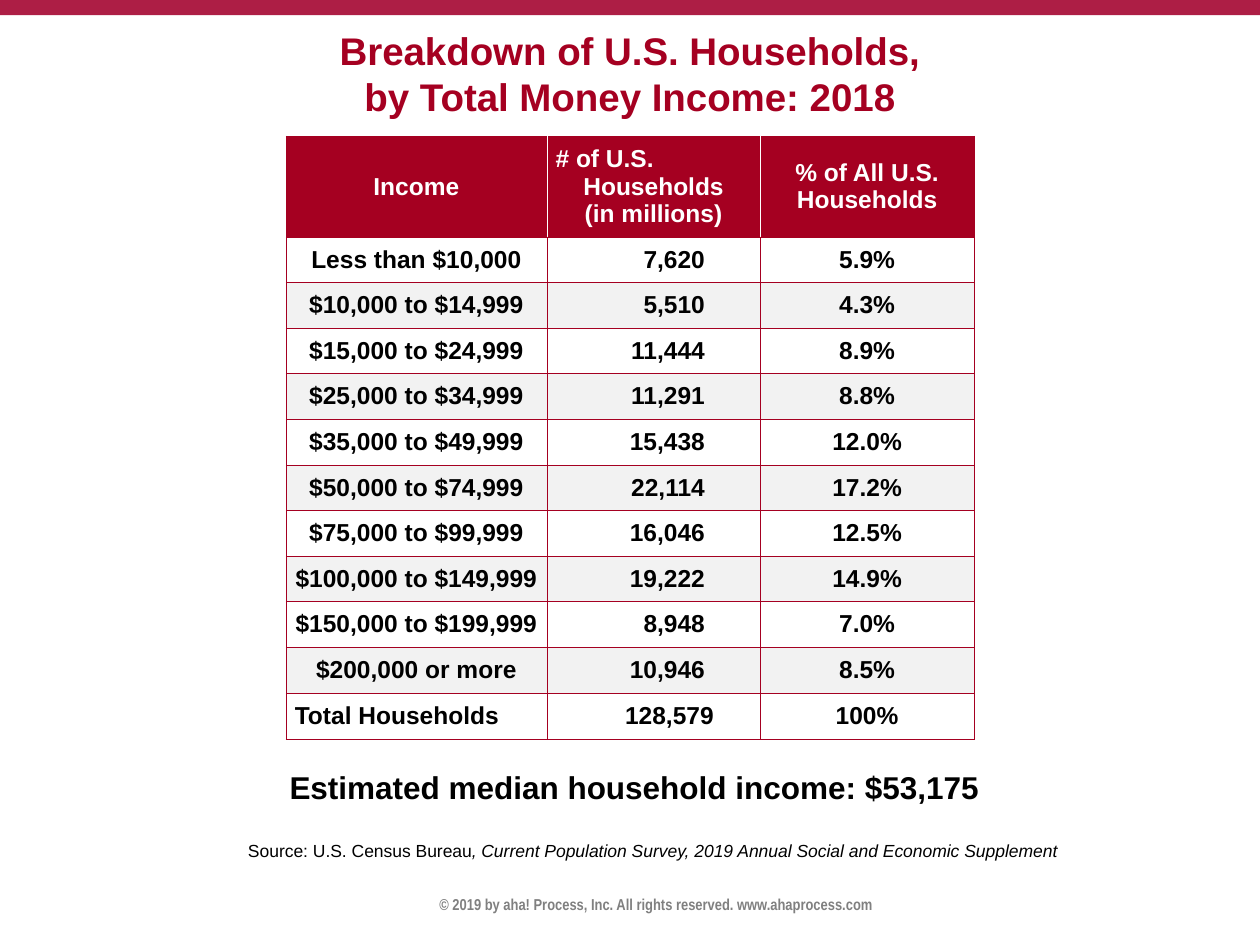
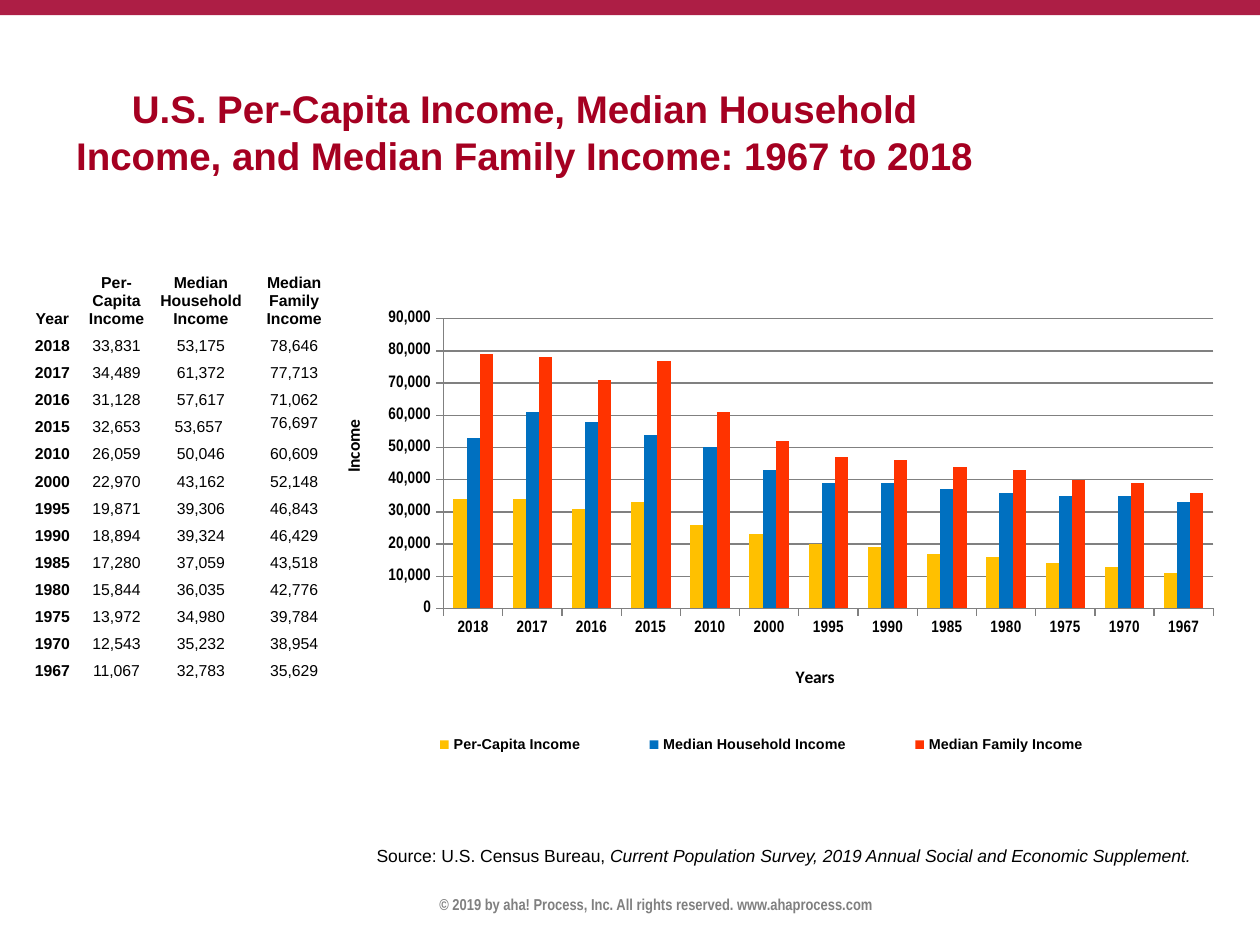
from dataclasses import dataclass

from lxml import etree
from pptx import Presentation
from pptx.chart.data import CategoryChartData
from pptx.dml.color import RGBColor
from pptx.enum.chart import XL_CHART_TYPE, XL_LEGEND_POSITION, XL_TICK_MARK
from pptx.enum.shapes import MSO_SHAPE
from pptx.enum.text import MSO_ANCHOR, MSO_AUTO_SIZE, PP_ALIGN
from pptx.oxml import parse_xml
from pptx.oxml.ns import nsdecls, qn
from pptx.util import Inches, Pt

LEFT, CENTER, RIGHT = PP_ALIGN.LEFT, PP_ALIGN.CENTER, PP_ALIGN.RIGHT
MIDDLE, BOTTOM = MSO_ANCHOR.MIDDLE, MSO_ANCHOR.BOTTOM
CLUSTERED, LEGEND_BOTTOM = XL_CHART_TYPE.COLUMN_CLUSTERED, XL_LEGEND_POSITION.BOTTOM
TICK_OUTSIDE, TICK_NONE = XL_TICK_MARK.OUTSIDE, XL_TICK_MARK.NONE
RECTANGLE, NO_AUTOFIT = MSO_SHAPE.RECTANGLE, MSO_AUTO_SIZE.NONE
TITLE_ONLY = 5

CRIMSON, BAND, GREY = "A50021", "AD1E45", "808080"
BLACK, WHITE, STRIPE = "000000", "FFFFFF", "F2F2F2"
FOOTER = "© 2019 by aha! Process, Inc. All rights reserved. www.ahaprocess.com"
SURVEY = "Current Population Survey, 2019 Annual Social and Economic Supplement"

HOUSEHOLDS = [
    ("Less than $10,000", "7,620", "5.9%"),
    ("$10,000 to $14,999", "5,510", "4.3%"),
    ("$15,000 to $24,999", "11,444", "8.9%"),
    ("$25,000 to $34,999", "11,291", "8.8%"),
    ("$35,000 to $49,999", "15,438", "12.0%"),
    ("$50,000 to $74,999", "22,114", "17.2%"),
    ("$75,000 to $99,999", "16,046", "12.5%"),
    ("$100,000 to $149,999", "19,222", "14.9%"),
    ("$150,000 to $199,999", "8,948", "7.0%"),
    ("$200,000 or more", "10,946", "8.5%"),
    ("Total Households", "128,579", "100%"),
]
MEASURES = {
    "Per-Capita Income": "FFC000",
    "Median Household Income": "0070C0",
    "Median Family Income": "FF3300",
}
INCOMES = [
    ("2018", "33,831", "53,175", "78,646"),
    ("2017", "34,489", "61,372", "77,713"),
    ("2016", "31,128", "57,617", "71,062"),
    ("2015", "32,653", "53,657 ", "76,697"),
    ("2010", "26,059", "50,046", "60,609"),
    ("2000", "22,970", "43,162", "52,148"),
    ("1995", "19,871", "39,306", "46,843"),
    ("1990", "18,894", "39,324", "46,429"),
    ("1985", "17,280", "37,059", "43,518"),
    ("1980", "15,844", "36,035", "42,776"),
    ("1975", "13,972", "34,980", "39,784"),
    ("1970", "12,543", "35,232", "38,954"),
    ("1967", "11,067", "32,783", "35,629"),
]


@dataclass(frozen=True)
class Box:
    left: float
    top: float
    width: float
    height: float

    def lengths(self) -> list:
        return [Inches(n) for n in (self.left, self.top, self.width, self.height)]


@dataclass(frozen=True)
class Style:
    size: float
    color: str = BLACK
    bold: bool = False
    italic: bool = False
    name: str = "Arial"


@dataclass(frozen=True)
class Line:
    runs: tuple
    align: PP_ALIGN = CENTER


@dataclass(frozen=True)
class CellLook:
    fill: str
    anchor: MSO_ANCHOR
    margins: tuple
    borders: tuple
    border_width: float


TITLE = Style(22, CRIMSON, True)
SOURCE, SOURCE_ITALIC = Style(10), Style(10, italic=True)
CHART = Box(2.3, 2.17, 7.5, 4)


def rgb(color: str) -> RGBColor:
    return RGBColor.from_string(color)


def apply_font(font, style: Style) -> None:
    font.size, font.name = Pt(style.size), style.name
    font.bold, font.italic = style.bold, style.italic
    font.color.rgb = rgb(style.color)


def write(frame, lines: list) -> None:
    for number, line in enumerate(lines):
        paragraph = frame.add_paragraph() if number else frame.paragraphs[0]
        paragraph.alignment = line.align
        for text, style in line.runs:
            run = paragraph.add_run()
            run.text = text
            apply_font(run.font, style)


def add_text(slide, box: Box, line: Line) -> None:
    frame = slide.shapes.add_textbox(*box.lengths()).text_frame
    frame.word_wrap = True
    write(frame, [line])


def add_slide(presentation, title_box: Box, title_lines: list):
    slide = presentation.slides.add_slide(presentation.slide_layouts[TITLE_ONLY])
    band = slide.shapes.add_shape(RECTANGLE, *Box(0, 0, 10, 0.12).lengths())
    band.shadow.inherit = False
    band.fill.solid()
    band.fill.fore_color.rgb = rgb(BAND)
    band.line.fill.background()
    add_text(slide, Box(1.67, 7.05, 7.07, 0.25),
             Line(((FOOTER, Style(9, GREY, True, name="Arial Narrow")),)))
    title = slide.shapes.title
    title.left, title.top, title.width, title.height = title_box.lengths()
    frame = title.text_frame
    frame.word_wrap, frame.auto_size = True, NO_AUTOFIT
    frame.vertical_anchor = MIDDLE
    write(frame, [Line(((text, TITLE),)) for text in title_lines])
    return slide


def add_table(slide, box: Box, widths: tuple, heights: list):
    table = slide.shapes.add_table(len(heights), len(widths), *box.lengths()).table
    table.first_row = table.horz_banding = False
    for column, width in zip(table.columns, widths):
        column.width = Inches(width)
    for row, height in zip(table.rows, heights):
        row.height = Inches(height)
    return table


def fill_cell(cell, lines: list, look: CellLook) -> None:
    (cell.margin_left, cell.margin_top,
     cell.margin_right, cell.margin_bottom) = [Inches(m) for m in look.margins]
    cell.vertical_anchor = look.anchor
    properties = cell._tc.get_or_add_tcPr()
    for tag, color in zip(("a:lnL", "a:lnR", "a:lnT", "a:lnB"), look.borders):
        border = etree.SubElement(properties, qn(tag), w=str(Pt(look.border_width)))
        fill = etree.SubElement(border, qn("a:solidFill"))
        etree.SubElement(fill, qn("a:srgbClr"), val=color)
    cell.fill.solid()
    cell.fill.fore_color.rgb = rgb(look.fill)
    write(cell.text_frame, lines)


def add_household_table(slide) -> None:
    width, income_width = 5.46, 2.07
    value_width = (width - income_width) / 2
    header_height, total_height, height = 0.8, 0.37, 4.79
    body_height = (height - header_height - total_height) / (len(HOUSEHOLDS) - 1)
    heights = [header_height] + [body_height] * (len(HOUSEHOLDS) - 1) + [total_height]
    table = add_table(slide, Box(2.27, 1.08, width, height),
                      (income_width, value_width, value_width), heights)

    header, body = Style(14, WHITE, True), Style(14, BLACK, True)
    headings = [
        [("Income", CENTER)],
        [("# of U.S.", LEFT), ("Households", CENTER), ("(in millions)", CENTER)],
        [("% of All U.S. Households", CENTER)],
    ]
    for column, heading in enumerate(headings):
        borders = (WHITE if column else CRIMSON,
                   WHITE if column < len(headings) - 1 else CRIMSON, CRIMSON, CRIMSON)
        fill_cell(table.cell(0, column),
                  [Line(((text, header),), align) for text, align in heading],
                  CellLook(CRIMSON, MIDDLE, (0.07, 0, 0.07, 0), borders, 0.25))

    for row, values in enumerate(HOUSEHOLDS, 1):
        is_total = row == len(HOUSEHOLDS)
        aligns = (LEFT if is_total else CENTER, RIGHT, CENTER)
        count_margin = 0.37 if is_total else 0.44
        for column, (value, align) in enumerate(zip(values, aligns)):
            right = count_margin if align == RIGHT else 0.07
            look = CellLook(WHITE if row % 2 else STRIPE, MIDDLE,
                            (0.07, 0, right, 0), (CRIMSON,) * 4, 0.25)
            fill_cell(table.cell(row, column), [Line(((value, body),), align)], look)


def add_income_table(slide) -> None:
    header_height, height = 0.68, 3.48
    body_height = (height - header_height) / len(INCOMES)
    table = add_table(slide, Box(0.17, 1.92, 2.5, height), (0.49, 0.53, 0.81, 0.67),
                      [header_height] + [body_height] * len(INCOMES))
    for row, values in enumerate([("Year", *MEASURES), *INCOMES]):
        for column, value in enumerate(values):
            anchor = MIDDLE if value == "76,697" else BOTTOM
            style = Style(9, bold=row == 0 or column == 0)
            look = CellLook(WHITE, anchor, (0.01, 0.01, 0.01, 0), (WHITE,) * 4, 1)
            fill_cell(table.cell(row, column), [Line(((value, style),))], look)


def place(element, left: float, top: float, size: tuple = (), inner: bool = False) -> None:
    for existing in element.findall(qn("c:layout")):
        element.remove(existing)
    target = '<c:layoutTarget val="inner"/>' if inner else ""
    spans = (CHART.width, CHART.height) * 2
    values = "".join(f'<c:{tag} val="{length / span}"/>'
                     for tag, length, span in zip("xywh", (left, top, *size), spans))
    layout = parse_xml(
        f'<c:layout {nsdecls("c")}><c:manualLayout>{target}<c:xMode val="edge"/>'
        f'<c:yMode val="edge"/>{values}</c:manualLayout></c:layout>')
    before = [child for child in element
              if child.tag in (qn("c:tx"), qn("c:legendPos"), qn("c:legendEntry"))]
    element.insert(len(before), layout)


def format_axis(axis, title: str, size: float, left: float, top: float) -> None:
    write(axis.axis_title.text_frame,
          [Line(((title, Style(10, bold=True, name="Calibri")),))])
    place(axis.axis_title._element, left, top)
    apply_font(axis.tick_labels.font, Style(size, bold=True, name="Arial Narrow"))
    axis.major_tick_mark, axis.minor_tick_mark = TICK_OUTSIDE, TICK_NONE
    axis.format.line.color.rgb = rgb(GREY)
    axis.format.line.width = Pt(0.75)


def add_income_chart(slide) -> None:
    data = CategoryChartData(number_format="#,##0")
    years, *columns = zip(*INCOMES)
    data.categories = years
    for name, column in zip(MEASURES, columns):
        data.add_series(name, [round(int(value.replace(",", "")), -3) for value in column])
    chart = slide.shapes.add_chart(CLUSTERED, *CHART.lengths(), data).chart
    apply_font(chart.font, Style(10, name="Calibri"))
    chart.has_title = False
    plot = chart.plots[0]
    plot.gap_width, plot.overlap, plot.vary_by_categories = 150, 0, False
    for series, color in zip(plot.series, MEASURES.values()):
        series.format.fill.solid()
        series.format.fill.fore_color.rgb = rgb(color)
        series.invert_if_negative = False

    format_axis(chart.category_axis, "Years", 9.4, 3.99, 3.09)
    values = chart.value_axis
    format_axis(values, "Income", 9.5, 0.39, 1.14)
    values.minimum_scale, values.maximum_scale, values.major_unit = 0, 90000, 10000
    values.tick_labels.number_format = "#,##0"
    values.tick_labels.number_format_is_linked = False
    values.major_gridlines.format.line.color.rgb = rgb(GREY)
    values.major_gridlines.format.line.width = Pt(0.75)

    chart.has_legend = True
    chart.legend.position = LEGEND_BOTTOM
    chart.legend.include_in_layout = False
    apply_font(chart.legend.font, Style(8.2, bold=True))
    place(chart.legend._element, 0.68, 3.58, (6.13, 0.32))
    place(chart._chartSpace.chart.plotArea, 1.22, 0.36, (6.11, 2.3), inner=True)


def main() -> None:
    presentation = Presentation()
    presentation.slide_width, presentation.slide_height = Inches(10), Inches(7.5)

    households = add_slide(presentation, Box(2.27, 0.08, 5.46, 1),
                           ["Breakdown of U.S. Households,", "by Total Money Income: 2018"])
    add_text(households, Box(1.87, 6.05, 6.33, 0.4),
             Line((("Estimated median household income: $53,175", Style(18, bold=True)),)))
    add_text(households, Box(1.87, 6.62, 7.17, 0.27),
             Line((("Source: U.S. Census Bureau", SOURCE),
                   (f", {SURVEY}", SOURCE_ITALIC)), LEFT))
    add_household_table(households)

    incomes = add_slide(presentation, Box(0.33, 0.42, 7.67, 1.25),
                        ["U.S. Per-Capita Income, Median Household Income, "
                         "and Median Family Income: 1967 to 2018"])
    add_text(incomes, Box(2.89, 6.66, 6.67, 0.27),
             Line((("Source: U.S. Census Bureau, ", SOURCE),
                   (f"{SURVEY}.", SOURCE_ITALIC)), LEFT))
    add_income_table(incomes)
    add_income_chart(incomes)

    presentation.save("out.pptx")


if __name__ == "__main__":
    main()
